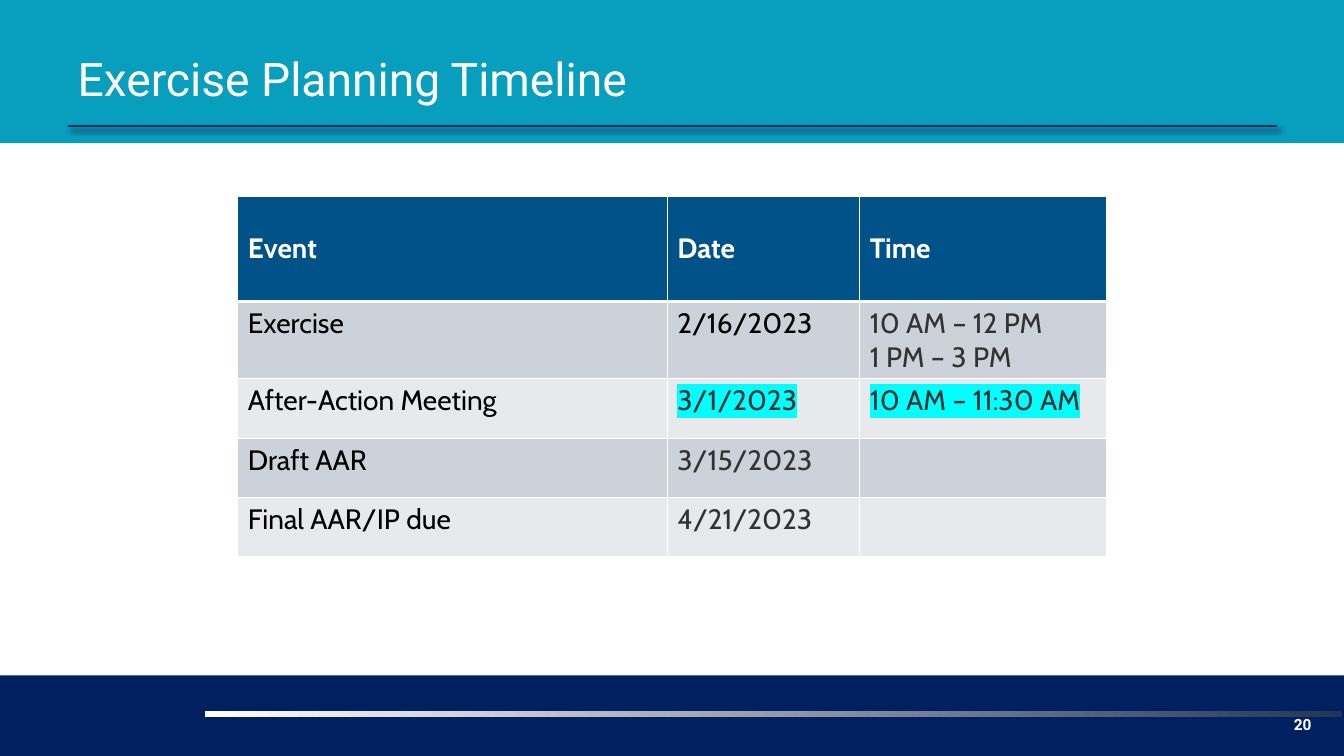
from dataclasses import dataclass

from lxml import etree
from pptx import Presentation
from pptx import util as u
from pptx.dml.color import RGBColor
from pptx.enum import shapes, text
from pptx.oxml import parse_xml
from pptx.oxml.ns import nsdecls, qn

# Grid: square units, ten to the inch
UNIT = u.Inches(0.1)
COLUMNS, ROWS = 133.33, 75

COLORS = {
    "navy": "012060", "teal": "079FBD", "slate": "243658", "white": "FFFFFF",
    "rule": "16325C", "rule_shadow": "1D2B58", "header": "005288",
    "odd_row": "CCD1DA", "even_row": "E7E9ED", "black": "000000",
    "gray": "333333", "cyan": "00FFFF",
}


@dataclass
class Band:
    col: float
    row: float
    width: float
    height: float
    color: str
    fade_to: str = ""


@dataclass
class Entry:
    text: str
    color: str = "black"
    bold: bool = False
    highlight: str = ""


BANDS = [
    Band(0, 67, COLUMNS, 8, "navy"),
    Band(0, 0, COLUMNS, 14.2, "teal"),
    Band(20.3, 70.5, 112.8, 0.6, "slate", fade_to="white"),
]
TABLE_COLS = [42.6, 19.1, 24.5]
HEADER_HEIGHT, ROW_HEIGHT = 10.4, 5.9
TIMELINE = [
    [Entry(name, "white", bold=True) for name in ("Event", "Date", "Time")],
    [Entry("Exercise"), Entry("2/16/2023"),
     Entry("10 AM – 12 PM\n1 PM – 3 PM", "gray")],
    [Entry("After-Action Meeting"), Entry("3/1/2023", "gray", highlight="cyan"),
     Entry("10 AM – 11:30 AM", "gray", highlight="cyan")],
    [Entry("Draft AAR"), Entry("3/15/2023", "gray"), Entry("")],
    [Entry("Final AAR/IP due"), Entry("4/21/2023", "gray"), Entry("")],
]


def grid(*lengths: float) -> list[int]:
    return [round(n * UNIT) for n in lengths]


def rgb(name: str) -> RGBColor:
    return RGBColor.from_string(COLORS[name])


def set_font(p, name: str, size: float, color: str, bold: bool = False) -> None:
    p.font.name, p.font.size, p.font.bold = name, u.Pt(size), bold
    p.font.color.rgb = rgb(color)


def draw_band(slide, band: Band) -> None:
    sp = slide.shapes.add_shape(
        shapes.MSO_SHAPE.RECTANGLE,
        *grid(band.col, band.row, band.width, band.height))
    sp.shadow.inherit = False
    sp.line.fill.background()
    if band.fade_to:
        sp.fill.gradient()
        sp.fill.gradient_angle = 180
        for stop, color in zip(sp.fill.gradient_stops, (band.color, band.fade_to)):
            stop.color.rgb = rgb(color)
    else:
        sp.fill.solid()
        sp.fill.fore_color.rgb = rgb(band.color)


def draw_rule(slide) -> None:
    line = slide.shapes.add_connector(
        shapes.MSO_CONNECTOR.STRAIGHT, *grid(6.7, 12.5, 126.7, 12.5))
    line.line.color.rgb = rgb("rule")
    line.line.width = u.Pt(1.5)
    line._element.spPr.append(parse_xml(
        f'<a:effectLst {nsdecls("a")}>'
        f'<a:outerShdw blurRad="{u.Pt(4)}" dist="{u.Pt(3)}" dir="2700000">'
        f'<a:srgbClr val="{COLORS["rule_shadow"]}"><a:alpha val="79000"/></a:srgbClr>'
        '</a:outerShdw></a:effectLst>'))


def set_borders(cell, top: float, bottom: float) -> None:
    tcPr = cell._tc.get_or_add_tcPr()
    for side, width in zip("LRTB", (1, 1, top, bottom)):
        tcPr.append(parse_xml(
            f'<a:ln{side} {nsdecls("a")} w="{u.Pt(width)}"><a:solidFill>'
            f'<a:srgbClr val="{COLORS["white"]}"/></a:solidFill></a:ln{side}>'))


def highlight_run(r, color: str) -> None:
    mark = etree.SubElement(r.font._element, qn("a:highlight"))
    etree.SubElement(mark, qn("a:srgbClr"), val=COLORS[color])


def fill_cell(cell, entry: Entry, row: int) -> None:
    set_borders(cell, top=3 if row == 1 else 1, bottom=3 if row == 0 else 1)
    cell.fill.solid()
    cell.fill.fore_color.rgb = rgb(
        "header" if row == 0 else "odd_row" if row % 2 else "even_row")
    if row == 0:
        cell.vertical_anchor = text.MSO_ANCHOR.MIDDLE
    cell.text_frame.text = entry.text
    for p in cell.text_frame.paragraphs:
        set_font(p, "Cabin", 20, entry.color, entry.bold)
        if entry.highlight:
            for r in p.runs:
                highlight_run(r, entry.highlight)


def draw_timeline(slide) -> None:
    heights = [HEADER_HEIGHT] + [ROW_HEIGHT] * (len(TIMELINE) - 1)
    table = slide.shapes.add_table(
        len(TIMELINE), len(TABLE_COLS),
        *grid(23.6, 19.5, sum(TABLE_COLS), sum(heights))).table
    for column, width in zip(table.columns, grid(*TABLE_COLS)):
        column.width = width
    for i, (height, entries) in enumerate(zip(grid(*heights), TIMELINE)):
        table.rows[i].height = height
        for j, entry in enumerate(entries):
            fill_cell(table.cell(i, j), entry, i)


def draw_title(slide) -> None:
    sp = slide.shapes.title
    sp.left, sp.top, sp.width, sp.height = grid(6.7, 3, 120, 9.5)
    tf = sp.text_frame
    tf.text = "Exercise Planning Timeline"
    tf.auto_size = text.MSO_AUTO_SIZE.NONE
    tf.vertical_anchor = text.MSO_ANCHOR.MIDDLE
    p = tf.paragraphs[0]
    p.alignment = text.PP_ALIGN.LEFT
    set_font(p, "Roboto", 33, "white")
    slide.shapes._spTree.append(sp._element)  # in front of the bands


def draw_page_number(slide) -> None:
    tf = slide.shapes.add_textbox(*grid(123, 70.5, 8.1, 3)).text_frame
    tf.word_wrap = True
    tf.text = "20"
    p = tf.paragraphs[0]
    p.alignment = text.PP_ALIGN.RIGHT
    set_font(p, "Roboto", 11, "white", bold=True)


def main() -> None:
    prs = Presentation()
    prs.slide_width, prs.slide_height = grid(COLUMNS, ROWS)
    slide = prs.slides.add_slide(prs.slide_layouts[5])

    # Background bands and rule
    for band in BANDS:
        draw_band(slide, band)
    draw_rule(slide)

    # Content
    draw_title(slide)
    draw_page_number(slide)
    draw_timeline(slide)
    prs.save("out.pptx")


if __name__ == "__main__":
    main()
